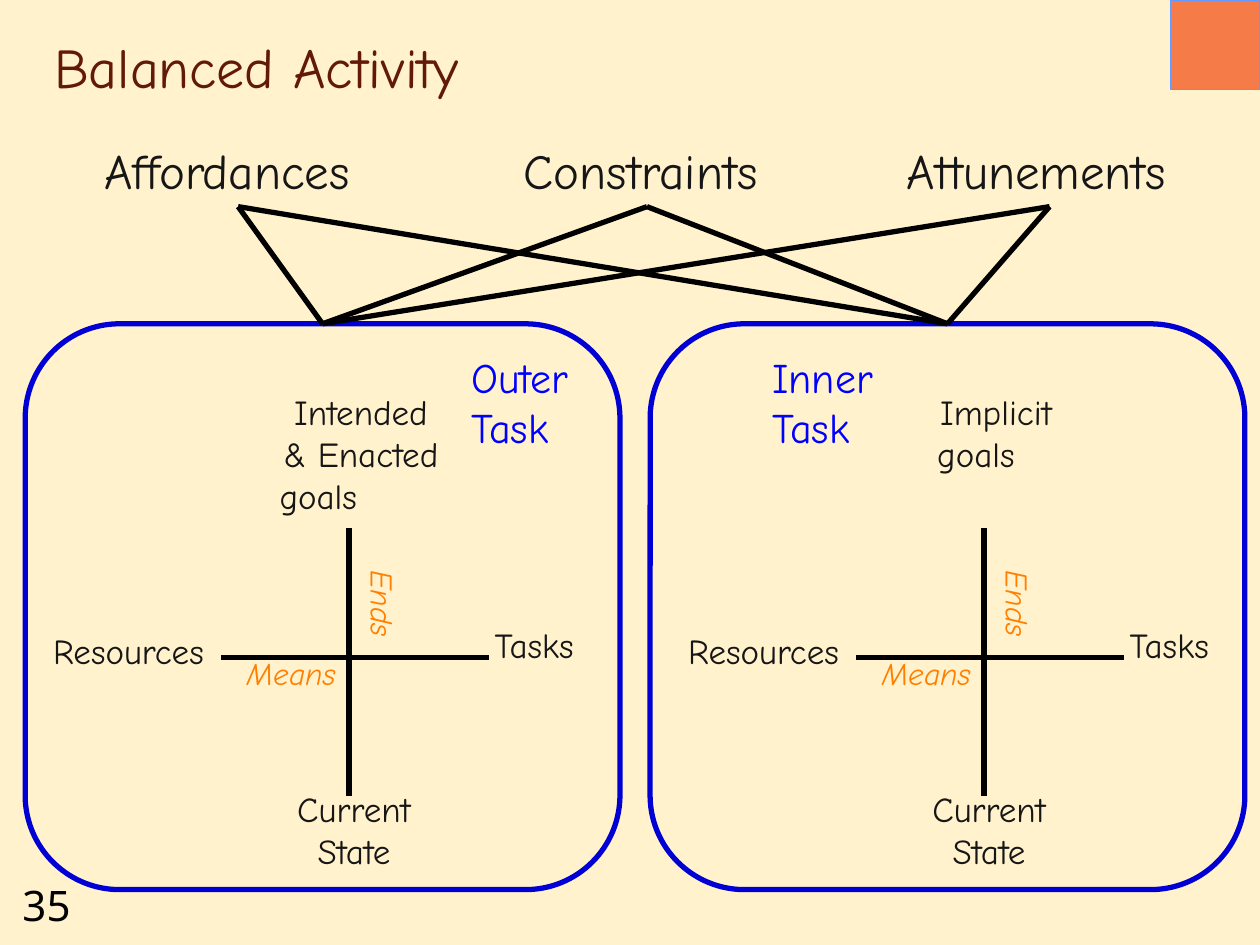
from dataclasses import dataclass

import lxml.etree
import pptx
import pptx.dml.color
import pptx.enum.shapes
import pptx.enum.text
import pptx.oxml.ns
import pptx.util

Inches = pptx.util.Inches
Align = pptx.enum.text.PP_ALIGN
Shape = pptx.enum.shapes.MSO_SHAPE
STRAIGHT = pptx.enum.shapes.MSO_CONNECTOR.STRAIGHT
TOP, BOTTOM = 0, 2

COLORS = {
    "background": "FFF2CC",
    "title": "631908",
    "text": "161616",
    "axis label": "FF8000",
    "task": "0000FF",
    "panel": "0000D4",
    "line": "000000",
    "button": "F57B49",
    "button edge": "6699FF",
}


@dataclass
class Label:
    paragraphs: list[str]
    left: float
    top: float
    width: float
    height: float
    size: int = 20
    color: str = "text"
    font: str = "Comic Neue"
    centered: bool = False
    italic: bool = False
    vertical: bool = False
    wrap: bool = False


@dataclass
class Activity:
    panel_left: float
    shift: float
    task: Label
    goals: Label


AXIS_LABELS = [
    Label(["Ends"], 2.74, 4.43, 0.5, 0.7, 18, "axis label", italic=True, vertical=True),
    Label(["Means"], 1.86, 5.14, 1, 0.4, 18, "axis label", italic=True),
    Label(["Current\nState"], 2.22, 6.2, 1.18, 0.77, centered=True),
    Label(["Resources"], 0.28, 4.95, 1.48, 0.44, centered=True),
    Label(["Tasks"], 3.8, 4.9, 0.88, 0.44, centered=True),
]
AXES = [(2.77, 4.19, 2.77, 6.32), (3.88, 5.22, 1.75, 5.22)]
ACTIVITIES = [
    Activity(
        0.2, 0,
        Label(["Outer\nTask"], 3.64, 2.74, 1.09, 0.91, 24, "task"),
        Label(["Intended\n& Enacted", "goals"], 2.12, 3.05, 1.49, 1.11, centered=True),
    ),
    Activity(
        5.16, 5.04,
        Label(["Inner\nTask"], 6.03, 2.74, 1.04, 0.91, 24, "task"),
        Label(["Implicit", "goals"], 7.34, 3.05, 1.13, 0.77, centered=True),
    ),
]
INFLUENCES = [
    Label(["Affordances"], 0.73, 1.07, 2.32, 0.57, 28),
    Label(["Constraints"], 4.06, 1.07, 2.15, 0.57, 28),
    Label(["Attunements"], 7.1, 1.07, 2.46, 0.57, 28),
]
SLIDE_NUMBER = Label(["35"], 0.08, 6.93, 0.75, 0.5, 24, "line", "Noto Sans", wrap=True)


def rgb(name: str) -> pptx.dml.color.RGBColor:
    return pptx.dml.color.RGBColor.from_string(COLORS[name])


def style_runs(paragraph, size: int, color: str, font: str, italic: bool = False) -> None:
    for run in paragraph.runs:
        run.font.size = pptx.util.Pt(size)
        run.font.name = font
        run.font.italic = italic
        run.font.color.rgb = rgb(color)


def add_title(slide, text: str) -> None:
    title = slide.shapes.title
    title.left, title.top = Inches(0.33), Inches(0.17)
    title.width, title.height = Inches(8.5), Inches(0.67)
    frame = title.text_frame
    frame.text = text
    frame.auto_size = pptx.enum.text.MSO_AUTO_SIZE.NONE
    frame.vertical_anchor = pptx.enum.text.MSO_ANCHOR.BOTTOM
    frame.paragraphs[0].alignment = Align.LEFT
    style_runs(frame.paragraphs[0], 32, "title", "Comic Neue")


def add_label(slide, label: Label, shift: float = 0):
    box = slide.shapes.add_textbox(
        Inches(label.left + shift), Inches(label.top), Inches(label.width), Inches(label.height)
    )
    frame = box.text_frame
    frame.word_wrap = label.wrap
    frame.auto_size = pptx.enum.text.MSO_AUTO_SIZE.SHAPE_TO_FIT_TEXT
    if label.vertical:
        box.element.txBody.bodyPr.set("vert", "vert")
    for index, text in enumerate(label.paragraphs):
        paragraph = frame.add_paragraph() if index else frame.paragraphs[0]
        paragraph.text = text
        # Only the opening paragraph of a centred label is centred.
        paragraph.alignment = Align.CENTER if label.centered and index == 0 else Align.LEFT
        style_runs(paragraph, label.size, label.color, label.font, label.italic)
    return box


def add_line(slide, x1: float = 0, y1: float = 0, x2: float = 0, y2: float = 0):
    line = slide.shapes.add_connector(STRAIGHT, Inches(x1), Inches(y1), Inches(x2), Inches(y2))
    line.line.color.rgb = rgb("line")
    line.line.width = pptx.util.Pt(3)
    lxml.etree.SubElement(line.element.spPr, pptx.oxml.ns.qn("a:effectLst"))
    return line


def add_activity(slide, activity: Activity):
    """Draw the crossed axes with their labels and return the panel around them."""
    for x1, y1, x2, y2 in AXES:
        add_line(slide, x1 + activity.shift, y1, x2 + activity.shift, y2)
    for label in AXIS_LABELS:
        add_label(slide, label, activity.shift)
    add_label(slide, activity.task)
    add_label(slide, activity.goals)
    panel = slide.shapes.add_shape(
        Shape.ROUNDED_RECTANGLE,
        Inches(activity.panel_left), Inches(2.57), Inches(4.72), Inches(4.49),
    )
    panel.shadow.inherit = False
    panel.fill.background()
    panel.line.color.rgb = rgb("panel")
    panel.line.width = pptx.util.Pt(3)
    return panel


def add_corner_button(slide) -> None:
    button = slide.shapes.add_shape(
        Shape.ACTION_BUTTON_CUSTOM, Inches(9.29), Inches(0), Inches(0.71), Inches(0.71)
    )
    button.shadow.inherit = False
    button.fill.solid()
    button.fill.fore_color.rgb = rgb("button")
    button.line.color.rgb = rgb("button edge")
    button.line.width = pptx.util.Pt(0.75)


def main() -> None:
    deck = pptx.Presentation()
    deck.slide_width, deck.slide_height = Inches(10), Inches(7.5)
    slide = deck.slides.add_slide(deck.slide_layouts.get_by_name("Title Only"))
    slide.background.fill.solid()
    slide.background.fill.fore_color.rgb = rgb("background")

    add_label(slide, SLIDE_NUMBER)
    add_title(slide, "Balanced Activity")
    influences = [add_label(slide, label) for label in INFLUENCES]
    panels = [add_activity(slide, activity) for activity in ACTIVITIES]
    for influence in influences:
        for panel in panels:
            link = add_line(slide)
            link.begin_connect(panel, TOP)
            link.end_connect(influence, BOTTOM)
    add_corner_button(slide)
    deck.save("out.pptx")


if __name__ == "__main__":
    main()
